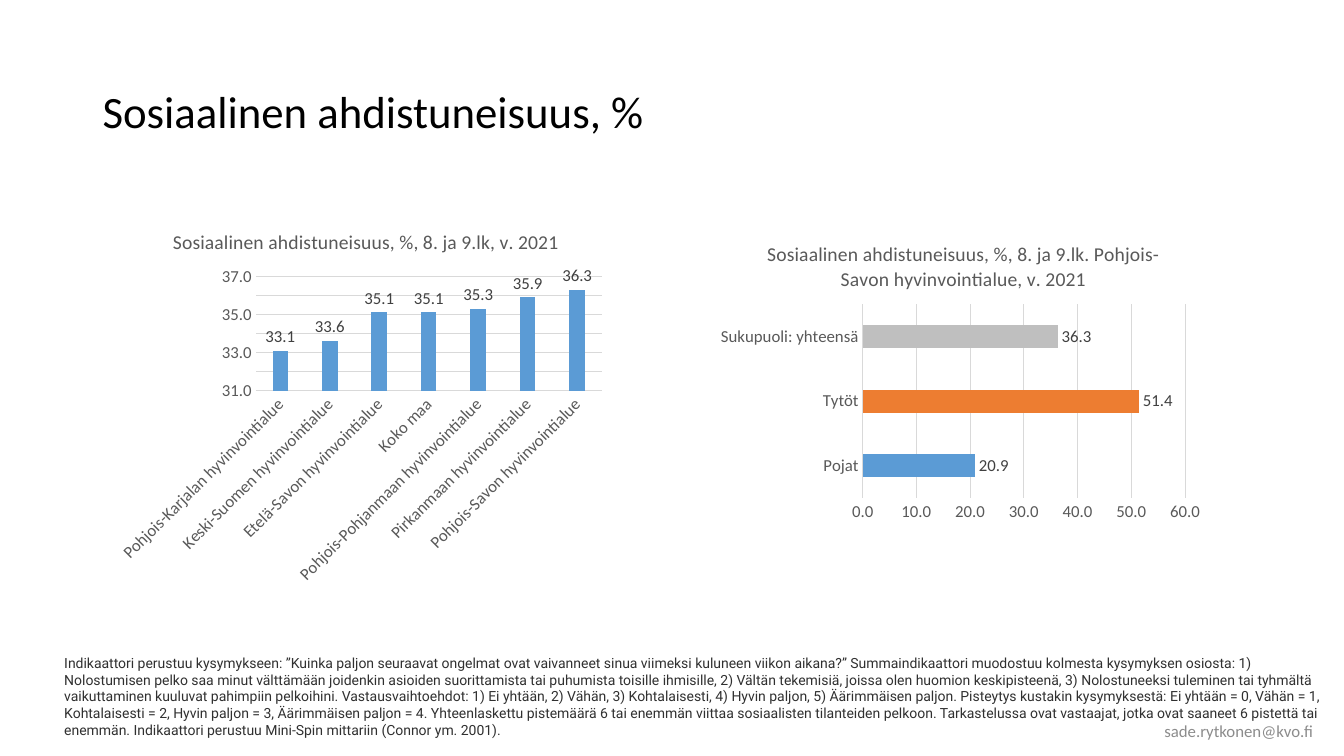
from dataclasses import dataclass

from pptx import Presentation
from pptx.chart.data import CategoryChartData
from pptx.dml.color import RGBColor
from pptx.enum.chart import XL_CHART_TYPE as ChartType
from pptx.enum.chart import XL_LABEL_POSITION as LabelPos
from pptx.enum.chart import XL_TICK_MARK as Tick
from pptx.enum.text import MSO_ANCHOR as Anchor
from pptx.enum.text import MSO_AUTO_SIZE as AutoSize
from pptx.enum.text import PP_ALIGN as Align
from pptx.oxml import parse_xml
from pptx.oxml.ns import nsdecls, qn
from pptx.util import Cm, Pt


@dataclass(frozen=True)
class Theme:
    font: str = "Calibri"
    note_font: str = "Roboto"
    black: str = "000000"
    axis_text: str = "595959"
    label_text: str = "404040"
    note_text: str = "303030"
    muted: str = "8C8C8C"
    grid: str = "D9D9D9"
    blue: str = "5B9BD5"
    orange: str = "ED7D31"
    grey: str = "BFBFBF"
    title_pt: float = 32
    chart_title_pt: float = 14
    chart_pt: float = 12
    email_pt: float = 12
    note_pt: float = 10
    line_pt: float = 0.75


LAYOUT_XML = (
    "<c:layout %s><c:manualLayout><c:layoutTarget val='inner'/>"
    "<c:xMode val='edge'/><c:yMode val='edge'/>"
    "<c:x val='{}'/><c:y val='{}'/><c:w val='{}'/><c:h val='{}'/>"
    "</c:manualLayout></c:layout>" % nsdecls("c")
)
NUMBER_FORMAT = "0.0"

TITLE = "Sosiaalinen ahdistuneisuus, %"
EMAIL = "sade.rytkonen@kvo.fi"
REGIONS = {
    "Pohjois-Karjalan hyvinvointialue": 33.1,
    "Keski-Suomen hyvinvointialue": 33.6,
    "Etelä-Savon hyvinvointialue": 35.1,
    "Koko maa": 35.1,
    "Pohjois-Pohjanmaan hyvinvointialue": 35.3,
    "Pirkanmaan hyvinvointialue": 35.9,
    "Pohjois-Savon hyvinvointialue": 36.3,
}
GENDERS = {"Pojat": 20.9, "Tytöt": 51.4, "Sukupuoli: yhteensä": 36.3}
NOTE_SENTENCES = (
    "Indikaattori perustuu kysymykseen: ”Kuinka paljon seuraavat ongelmat ovat "
    "vaivanneet sinua viimeksi kuluneen viikon aikana?”",
    "Summaindikaattori muodostuu kolmesta kysymyksen osiosta: 1) Nolostumisen pelko saa "
    "minut välttämään joidenkin asioiden suorittamista tai puhumista toisille ihmisille, "
    "2) Vältän tekemisiä, joissa olen huomion keskipisteenä, 3) Nolostuneeksi tuleminen "
    "tai tyhmältä vaikuttaminen kuuluvat pahimpiin pelkoihini.",
    "Vastausvaihtoehdot: 1) Ei yhtään, 2) Vähän, 3) Kohtalaisesti, 4) Hyvin paljon, "
    "5) Äärimmäisen paljon.",
    "Pisteytys kustakin kysymyksestä: Ei yhtään = 0, Vähän = 1, Kohtalaisesti = 2, "
    "Hyvin paljon = 3, Äärimmäisen paljon = 4.",
    "Yhteenlaskettu pistemäärä 6 tai enemmän viittaa sosiaalisten tilanteiden pelkoon.",
    "Tarkastelussa ovat vastaajat, jotka ovat saaneet 6 pistettä tai enemmän.",
    "Indikaattori perustuu Mini-Spin mittariin (Connor ym. 2001).",
)


class SlideBuilder:
    def __init__(self, slide, theme):
        self.s = slide
        self.theme = theme

    def style(self, font, size, color, name=None):
        font.name = name or self.theme.font
        font.size = Pt(size)
        font.bold = False
        font.color.rgb = RGBColor.from_string(color)

    def title(self, text, box):
        sp = self.s.shapes.title
        sp.left, sp.top, sp.width, sp.height = map(Cm, box)
        tf = sp.text_frame
        tf.text = text
        tf.auto_size = AutoSize.NONE
        tf.vertical_anchor = Anchor.MIDDLE
        p = tf.paragraphs[0]
        p.alignment = Align.LEFT
        p.line_spacing = 0.9
        self.style(p.runs[0].font, self.theme.title_pt, self.theme.black)

    def text(self, text, box, size, color, name=None, align=Align.LEFT, anchor=Anchor.TOP):
        tf = self.s.shapes.add_textbox(*map(Cm, box)).text_frame
        tf.word_wrap = True
        tf.vertical_anchor = anchor
        tf.text = text
        p = tf.paragraphs[0]
        p.alignment = align
        self.style(p.runs[0].font, size, color, name)

    def chart(self, kind, title, values, box, plot_box, scale, gap, overlap=0, colors=None):
        """Add a one-series bar chart; scale is (minimum, maximum, step)."""
        t = self.theme
        data = CategoryChartData(number_format=NUMBER_FORMAT)
        data.categories = list(values)
        data.add_series("%", list(values.values()))
        chart = self.s.shapes.add_chart(kind, *map(Cm, box), data).chart
        self.style(chart.font, t.chart_pt, t.black)
        chart.has_legend = False
        tf = chart.chart_title.text_frame
        tf.text = title
        self.style(tf.paragraphs[0].runs[0].font, t.chart_title_pt, t.axis_text)
        chart.chart_title.include_in_layout = False
        self.place_plot(chart, plot_box)
        self.axes(chart, scale)

        plot = chart.plots[0]
        plot.vary_by_categories = False
        plot.gap_width = gap
        plot.overlap = overlap
        series = plot.series[0]
        self.fill(series, t.blue)
        for i, color in (colors or {}).items():
            self.fill(series.points[i], color)
        labels = series.data_labels
        labels.show_value = True
        labels.position = LabelPos.OUTSIDE_END
        labels.number_format = NUMBER_FORMAT
        labels.number_format_is_linked = False
        self.style(labels.font, t.chart_pt, t.label_text)
        return chart

    def fill(self, item, color):
        item.format.fill.solid()
        item.format.fill.fore_color.rgb = RGBColor.from_string(color)

    def place_plot(self, chart, plot_box):
        area = chart.element.find(".//" + qn("c:plotArea"))
        for layout in area.findall(qn("c:layout")):
            area.remove(layout)
        area.insert(0, parse_xml(LAYOUT_XML.format(*plot_box)))

    def axes(self, chart, scale):
        t = self.theme
        cat, val = chart.category_axis, chart.value_axis
        for axis in (cat, val):
            axis.major_tick_mark = axis.minor_tick_mark = Tick.NONE
            self.style(axis.tick_labels.font, t.chart_pt, t.axis_text)
        val.minimum_scale, val.maximum_scale, val.major_unit = scale
        val.tick_labels.number_format = NUMBER_FORMAT
        val.tick_labels.number_format_is_linked = False
        val.format.line.fill.background()
        val.has_major_gridlines = True
        for line in (cat.format.line, val.major_gridlines.format.line):
            line.color.rgb = RGBColor.from_string(t.grid)
            line.width = Pt(t.line_pt)

    def tilt_categories(self, chart, degrees):
        steps = (qn("c:catAx"), qn("c:txPr"), qn("a:bodyPr"))
        body = chart.element.find(".//" + "/".join(steps))
        body.set("rot", str(degrees * 60000))
        body.set("vert", "horz")


def main():
    prs = Presentation()
    prs.slide_width, prs.slide_height = Cm(33.87), Cm(19.05)
    theme = Theme()
    b = SlideBuilder(prs.slides.add_slide(prs.slide_layouts[5]), theme)

    b.title(TITLE, (2.33, 1.02, 29.21, 3.68))
    b.text(EMAIL, (28.68, 17.91, 5.08, 1.02), theme.email_pt, theme.muted,
           align=Align.CENTER, anchor=Anchor.MIDDLE)
    regions = b.chart(
        ChartType.COLUMN_CLUSTERED, "Sosiaalinen ahdistuneisuus, %, 8. ja 9.lk, v. 2021",
        REGIONS, (2.9, 5.33, 12.65, 9.6), (0.28, 0.17, 0.69, 0.3),
        scale=(31, 37, 1), gap=219, overlap=-27)
    b.tilt_categories(regions, -45)
    b.chart(
        ChartType.BAR_CLUSTERED,
        "Sosiaalinen ahdistuneisuus, %, 8. ja 9.lk. Pohjois-Savon hyvinvointialue, v. 2021",
        GENDERS, (17.93, 5.69, 12.7, 7.62), (0.3, 0.26, 0.64, 0.64),
        scale=(0, 60, 10), gap=182, colors={1: theme.orange, 2: theme.grey})
    b.text(" ".join(NOTE_SENTENCES), (1.37, 16.36, 32.49, 2.39),
           theme.note_pt, theme.note_text, theme.note_font)
    prs.save("out.pptx")


if __name__ == "__main__":
    main()
